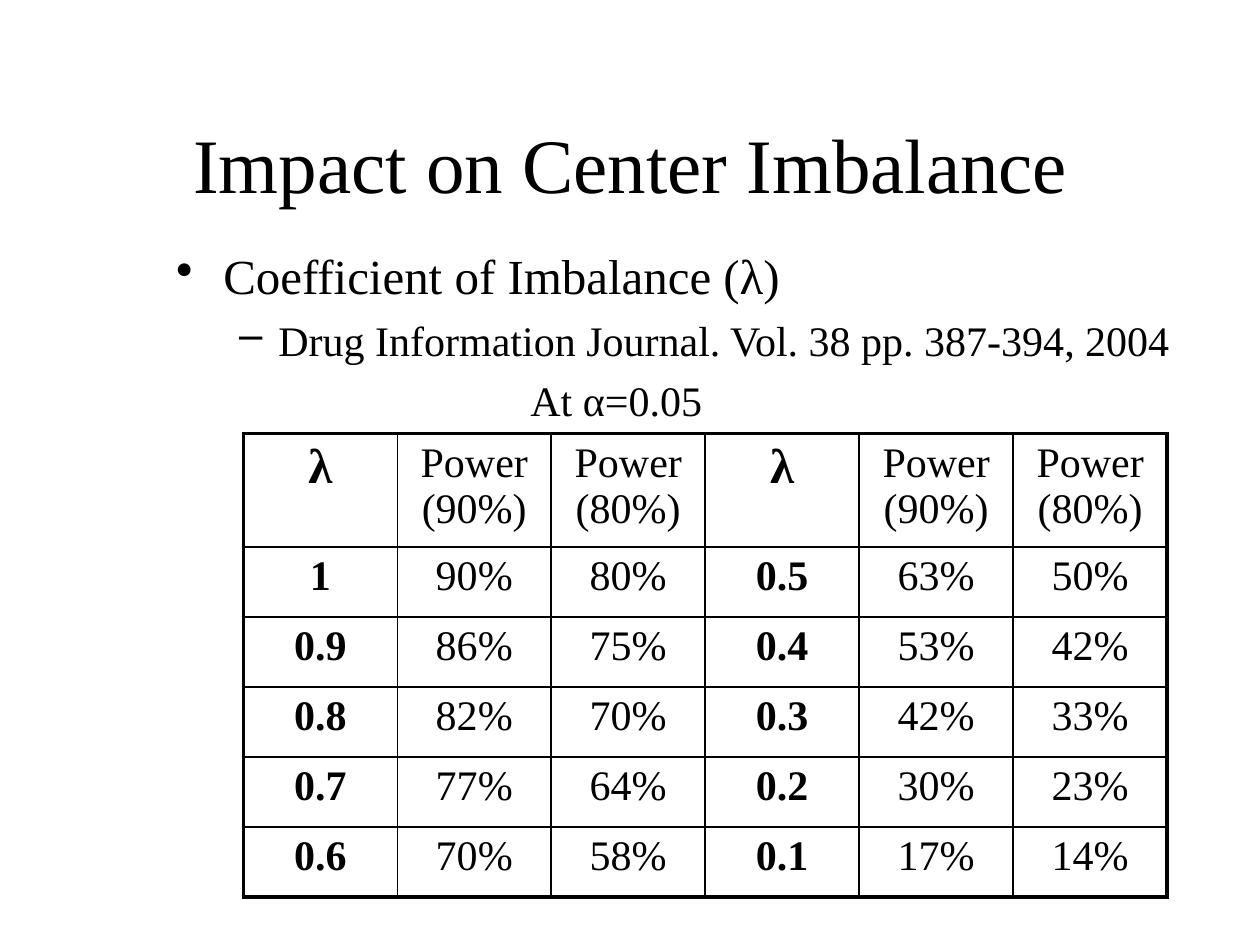
from lxml.etree import SubElement
from pptx import Presentation
from pptx.dml.color import RGBColor
from pptx.enum.text import MSO_ANCHOR, MSO_AUTO_SIZE, PP_ALIGN
from pptx.oxml.ns import qn
from pptx.util import Pt

COLORS = {"ink": "000000"}
FONT = "Times New Roman"
OUTER_BORDER, INNER_BORDER = 2.25, 1
TABLE_LEFT, TABLE_TOP = 139, 247.7
COLUMN_WIDTH, HEADER_HEIGHT, ROW_HEIGHT = 88, 59.5, 40

# text, size, left margin, first-line indent, bullet, space before
OUTLINE = [
    ("Coefficient of Imbalance (λ)", 28, 27, -27, "•", 0),
    ("Drug Information Journal. Vol. 38 pp. 387-394, 2004", 24, 58.5, -22.5, "–", 5.5),
    ("At α=0.05", 24, 202.5, 0, None, 5.5),
]
POWER_ROWS = [
    ["λ", "Power (90%)", "Power (80%)"] * 2,
    ["1", "90%", "80%", "0.5", "63%", "50%"],
    ["0.9", "86%", "75%", "0.4", "53%", "42%"],
    ["0.8", "82%", "70%", "0.3", "42%", "33%"],
    ["0.7", "77%", "64%", "0.2", "30%", "23%"],
    ["0.6", "70%", "58%", "0.1", "17%", "14%"],
]


def format_runs(paragraph, size, bold=False):
    for run in paragraph.runs:
        run.font.name = FONT
        run.font.size = Pt(size)
        run.font.bold = bold
        run.font.color.rgb = RGBColor.from_string(COLORS["ink"])


def add_title(slide, text):
    title = slide.shapes.title
    title.left, title.top, title.width, title.height = Pt(84), Pt(48), Pt(564), Pt(90)
    text_frame = title.text_frame
    text_frame.text = text
    text_frame.auto_size = MSO_AUTO_SIZE.NONE
    text_frame.vertical_anchor = MSO_ANCHOR.MIDDLE
    paragraph = text_frame.paragraphs[0]
    paragraph.alignment = PP_ALIGN.CENTER
    format_runs(paragraph, 44)


def set_bullet(paragraph, margin, indent, bullet):
    properties = paragraph._p.get_or_add_pPr()
    properties.set("marL", str(Pt(margin)))
    properties.set("indent", str(Pt(indent)))
    if bullet:
        SubElement(properties, qn("a:buChar"), char=bullet)
    else:
        SubElement(properties, qn("a:buNone"))


def add_outline(slide, outline):
    text_box = slide.shapes.add_textbox(Pt(93.5), Pt(137), Pt(605.5), Pt(87))
    text_frame = text_box.text_frame
    text_frame.word_wrap = True
    text_frame.text = "\n".join(item[0] for item in outline)
    for paragraph, item in zip(text_frame.paragraphs, outline):
        _, size, margin, indent, bullet, space_before = item
        set_bullet(paragraph, margin, indent, bullet)
        paragraph.space_before = Pt(space_before)
        format_runs(paragraph, size)


def set_borders(cell, widths):
    """Draw the left, right, top and bottom lines of a cell, in that order."""
    properties = cell._tc.get_or_add_tcPr()
    for side, width in zip("LRTB", widths):
        line = SubElement(properties, qn(f"a:ln{side}"), w=str(Pt(width)))
        fill = SubElement(line, qn("a:solidFill"))
        SubElement(fill, qn("a:srgbClr"), val=COLORS["ink"])


def add_power_table(slide, rows):
    row_count, column_count = len(rows), len(rows[0])
    table = slide.shapes.add_table(
        row_count, column_count, Pt(TABLE_LEFT), Pt(TABLE_TOP),
        Pt(column_count * COLUMN_WIDTH),
        Pt(HEADER_HEIGHT + (row_count - 1) * ROW_HEIGHT)).table
    table.first_row = table.horz_banding = False
    for column in table.columns:
        column.width = Pt(COLUMN_WIDTH)
    for row_index, values in enumerate(rows):
        table.rows[row_index].height = Pt(ROW_HEIGHT if row_index else HEADER_HEIGHT)
        for column_index, value in enumerate(values):
            cell = table.cell(row_index, column_index)
            cell.text_frame.text = value
            paragraph = cell.text_frame.paragraphs[0]
            paragraph.alignment = PP_ALIGN.CENTER
            format_runs(paragraph, 28 if value == "λ" else 24,
                        bold=column_index % 3 == 0)
            on_edge = (column_index == 0, column_index == column_count - 1,
                       row_index == 0, row_index == row_count - 1)
            set_borders(cell, [OUTER_BORDER if edge else INNER_BORDER
                               for edge in on_edge])
            cell.fill.background()


def main():
    presentation = Presentation()
    presentation.slide_width, presentation.slide_height = Pt(720), Pt(540)
    slide = presentation.slides.add_slide(presentation.slide_layouts[5])
    add_title(slide, "Impact on Center Imbalance ")
    add_outline(slide, OUTLINE)
    add_power_table(slide, POWER_ROWS)
    presentation.save("out.pptx")


if __name__ == "__main__":
    main()
